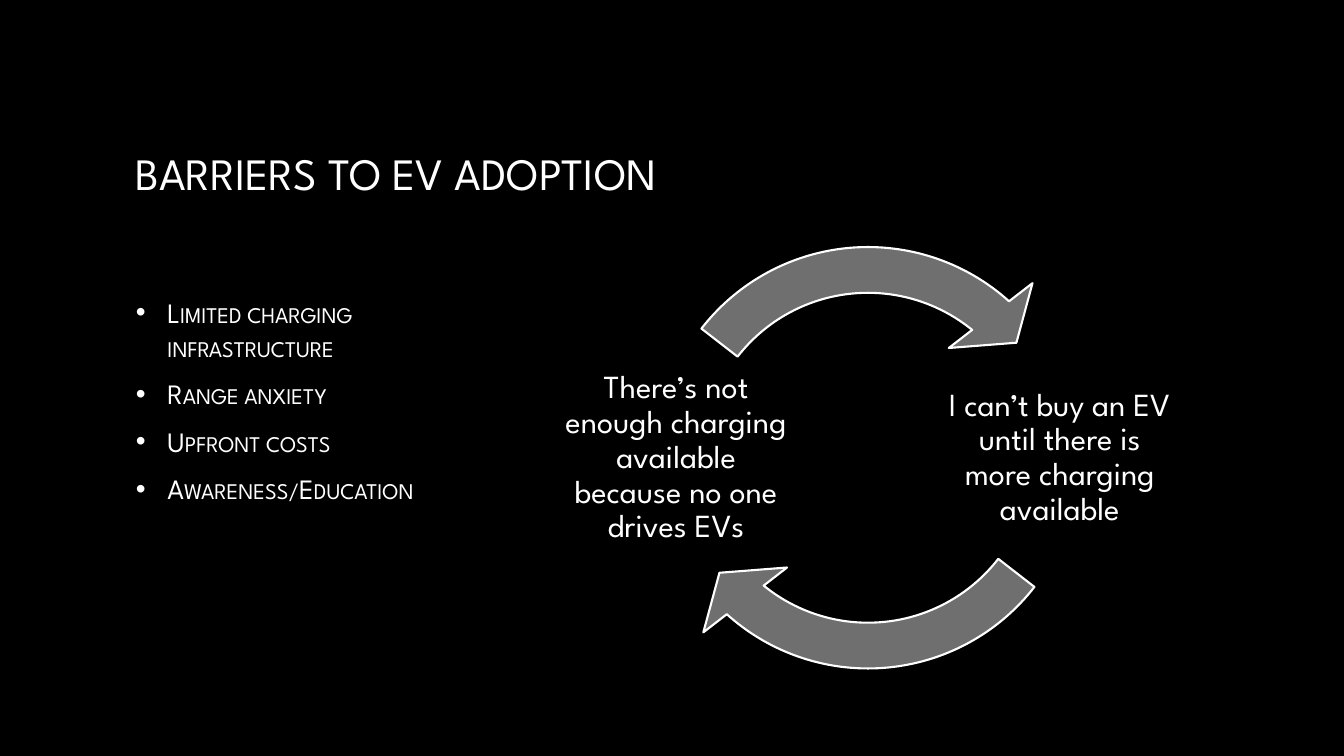
from dataclasses import dataclass
from lxml import etree
from pptx import Presentation
from pptx.dml.color import RGBColor
from pptx.enum.shapes import MSO_SHAPE
from pptx.enum.text import MSO_ANCHOR, PP_ALIGN
from pptx.oxml.ns import qn
from pptx.util import Pt

ARROW = MSO_SHAPE.CIRCULAR_ARROW
MIDDLE = MSO_ANCHOR.MIDDLE
LEFT, CENTER = PP_ALIGN.LEFT, PP_ALIGN.CENTER


@dataclass(frozen=True)
class Theme:
    face: str = "League Spartan"
    back: RGBColor = RGBColor(0, 0, 0)
    ink: RGBColor = RGBColor(255, 255, 255)
    fill: RGBColor = RGBColor(0x6F, 0x6F, 0x6F)
    title: int = 32
    body: int = 20
    label: int = 23
    line: float = 1.5


THEME = Theme()


def add_frame(slide, box, inset=None):
    frame = slide.shapes.add_textbox(*map(Pt, box)).text_frame
    frame.word_wrap = True
    frame.vertical_anchor = MIDDLE
    if inset is not None:
        frame.margin_left = frame.margin_right = Pt(inset)
        frame.margin_top = frame.margin_bottom = Pt(inset)
    return frame


def set_text(para, text, size, align=LEFT):
    para.text = text
    para.alignment = align
    font = para.font
    font.name = THEME.face
    font.size = Pt(size)
    font.color.rgb = THEME.ink


def add_title(slide, box):
    frame = add_frame(slide, box)
    set_text(frame.paragraphs[0], "BARRIERS TO EV ADOPTION", THEME.title)


def add_bullet(para, indent):
    props = para._p.get_or_add_pPr()
    props.set("marL", str(Pt(indent)))
    props.set("indent", str(-Pt(indent)))
    etree.SubElement(props, qn("a:buFont"), typeface="Arial")
    etree.SubElement(props, qn("a:buChar"), char="•")


def add_list(slide, box, items):
    frame = add_frame(slide, box)
    for i, item in enumerate(items):
        para = frame.paragraphs[0] if i == 0 else frame.add_paragraph()
        if i:
            para.space_before = Pt(4)
        para.space_after = Pt(6)
        add_bullet(para, 22.5)
        set_text(para, item, THEME.body)
        para._p.pPr.find(qn("a:defRPr")).set("cap", "small")


def add_label(slide, box, text):
    para = add_frame(slide, box, 2.3).paragraphs[0]
    para.line_spacing = 0.9
    set_text(para, text, THEME.label, CENTER)


def add_arrow(slide, box, start, end):
    shape = slide.shapes.add_shape(ARROW, *map(Pt, box))
    shape.shadow.inherit = False
    shape.fill.solid()
    shape.fill.fore_color.rgb = THEME.fill
    shape.line.color.rgb = THEME.ink
    shape.line.width = Pt(THEME.line)
    degree = 0.6
    values = 0.095, 11.43 * degree, end * degree, start * degree, 0.11
    for i, value in enumerate(values):
        shape.adjustments[i] = value


def add_cycle(slide, box, left, right):
    x, y, width, height = box
    side, ring = 167, 344
    top = y + (height - side) / 2
    circle = x + (width - ring) / 2, y + (height - ring) / 2, ring, ring
    add_label(slide, (x + width - side, top, side, side), right)
    add_label(slide, (x, top, side, side), left)
    for turn in (0, 180):
        add_arrow(slide, circle, 37.8 + turn, 130.8 + turn)


def main():
    deck = Presentation()
    deck.slide_width, deck.slide_height = Pt(960), Pt(540)
    slide = deck.slides.add_slide(deck.slide_layouts[6])
    slide.background.fill.solid()
    slide.background.fill.fore_color.rgb = THEME.back
    add_title(slide, (90, 48, 780, 150))
    add_list(slide, (90, 133, 281, 306), [
        "Limited charging infrastructure",
        "Range anxiety",
        "Upfront costs",
        "Awareness/Education",
    ])
    add_cycle(
        slide, (399.5, 155, 441, 344),
        "There’s not enough charging available because no one drives EVs",
        "I can’t buy an EV until there is more charging available",
    )
    deck.save("out.pptx")


if __name__ == "__main__":
    main()
